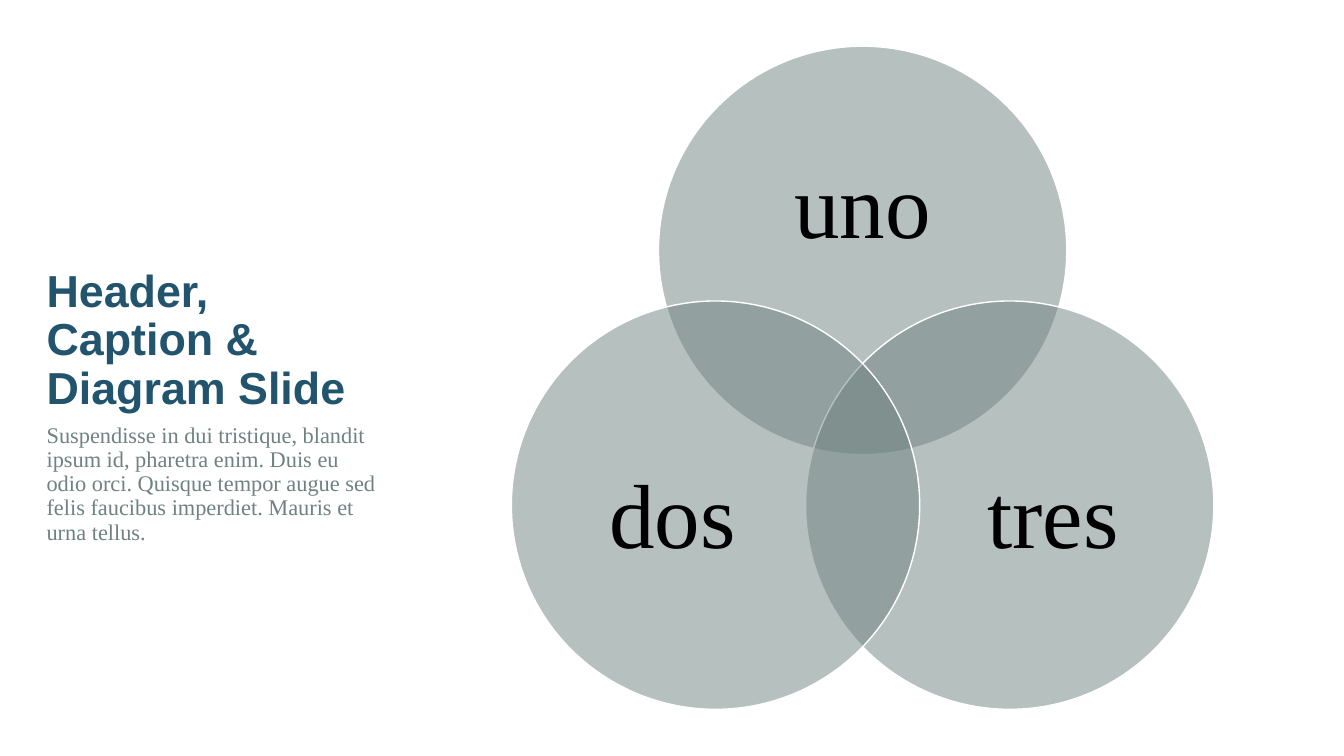
from dataclasses import dataclass
from math import cos, radians, sin

from lxml import etree
from pptx import Presentation
from pptx.dml.color import RGBColor
from pptx.enum.shapes import MSO_SHAPE
from pptx.enum.text import MSO_ANCHOR, MSO_AUTO_SIZE, PP_ALIGN
from pptx.oxml.ns import qn
from pptx.util import Cm, Pt

OVAL = MSO_SHAPE.OVAL
TOP, MIDDLE, BOTTOM = MSO_ANCHOR.TOP, MSO_ANCHOR.MIDDLE, MSO_ANCHOR.BOTTOM
LEFT, CENTER = PP_ALIGN.LEFT, PP_ALIGN.CENTER
NO_AUTOFIT = MSO_AUTO_SIZE.NONE


@dataclass(frozen=True)
class Theme:
    heading_font: str = "Arial"
    body_font: str = "Times New Roman"
    blue: RGBColor = RGBColor(0x22, 0x54, 0x6E)
    sage: RGBColor = RGBColor(0x6F, 0x82, 0x80)
    white: RGBColor = RGBColor(0xFF, 0xFF, 0xFF)
    black: RGBColor = RGBColor(0, 0, 0)
    title_size: int = 32
    body_size: int = 16
    label_size: int = 65


theme = Theme()


def write_text(shape, text, font, size, color, anchor, align, bold=False, before=0):
    frame = shape.text_frame
    frame.word_wrap = True
    frame.auto_size = NO_AUTOFIT
    frame.vertical_anchor = anchor
    paragraph = frame.paragraphs[0]
    paragraph.alignment = align
    paragraph.line_spacing = 0.9
    paragraph.space_before = Pt(before)
    run = paragraph.add_run()
    run.text = text
    run.font.name = font
    run.font.size = Pt(size)
    run.font.bold = bold
    run.font.color.rgb = color


def place(shape, left, top, width, height):
    shape.left, shape.top = Cm(left), Cm(top)
    shape.width, shape.height = Cm(width), Cm(height)


presentation = Presentation()
presentation.slide_width = Cm(33.87)
presentation.slide_height = Cm(19.05)
slide = presentation.slides.add_slide(
    presentation.slide_layouts.get_by_name("Content with Caption"))

# Three overlapping circles, evenly spaced around a common center
center_x, center_y = 21.74, 10.59
spread = 4.28
diameter = 10.29
# Label, angle of its circle, label shift from the circle's center, label size
circles = [
    ("uno", -90, (0, -1.03), (7.54, 4.62)),
    ("tres", 30, (1.09, 0.36), (6.17, 5.66)),
    ("dos", 150, (-1.09, 0.36), (6.17, 5.66)),
]
venn = slide.shapes.add_group_shape()
for text, angle, (shift_x, shift_y), (width, height) in circles:
    x = center_x + spread * cos(radians(angle))
    y = center_y + spread * sin(radians(angle))
    circle = venn.shapes.add_shape(
        OVAL, Cm(x - diameter / 2), Cm(y - diameter / 2), Cm(diameter), Cm(diameter))
    circle.shadow.inherit = False
    circle.fill.solid()
    circle.fill.fore_color.rgb = theme.sage
    fill_color = circle.fill._xPr.find(qn("a:solidFill"))[0]
    etree.SubElement(fill_color, qn("a:alpha"), val="50000")
    circle.line.color.rgb = theme.white
    circle.line.width = Pt(1)

    label = venn.shapes.add_textbox(
        Cm(x + shift_x - width / 2), Cm(y + shift_y - height / 2), Cm(width), Cm(height))
    frame = label.text_frame
    frame.margin_left = frame.margin_right = frame.margin_top = frame.margin_bottom = 0
    write_text(label, text, theme.body_font, theme.label_size, theme.black, MIDDLE, CENTER)

# Title and caption share the left column
column_left, column_width = 0.92, 8.99
title_top, caption_top = 0.94, 10.56

title = slide.shapes.title
place(title, column_left, title_top, column_width, caption_top - title_top)
write_text(title, "Header, Caption & Diagram Slide", theme.heading_font,
           theme.title_size, theme.blue, BOTTOM, LEFT, bold=True)

caption = slide.placeholders[2]
place(caption, column_left, caption_top, column_width, 7.54)
write_text(caption, "Suspendisse in dui tristique, blandit ipsum id, pharetra enim. "
           "Duis eu odio orci. Quisque tempor augue sed felis faucibus imperdiet. "
           "Mauris et urna tellus.", theme.body_font, theme.body_size, theme.sage,
           TOP, LEFT, before=10)

unused = slide.placeholders[1].element
unused.getparent().remove(unused)

presentation.save("out.pptx")
